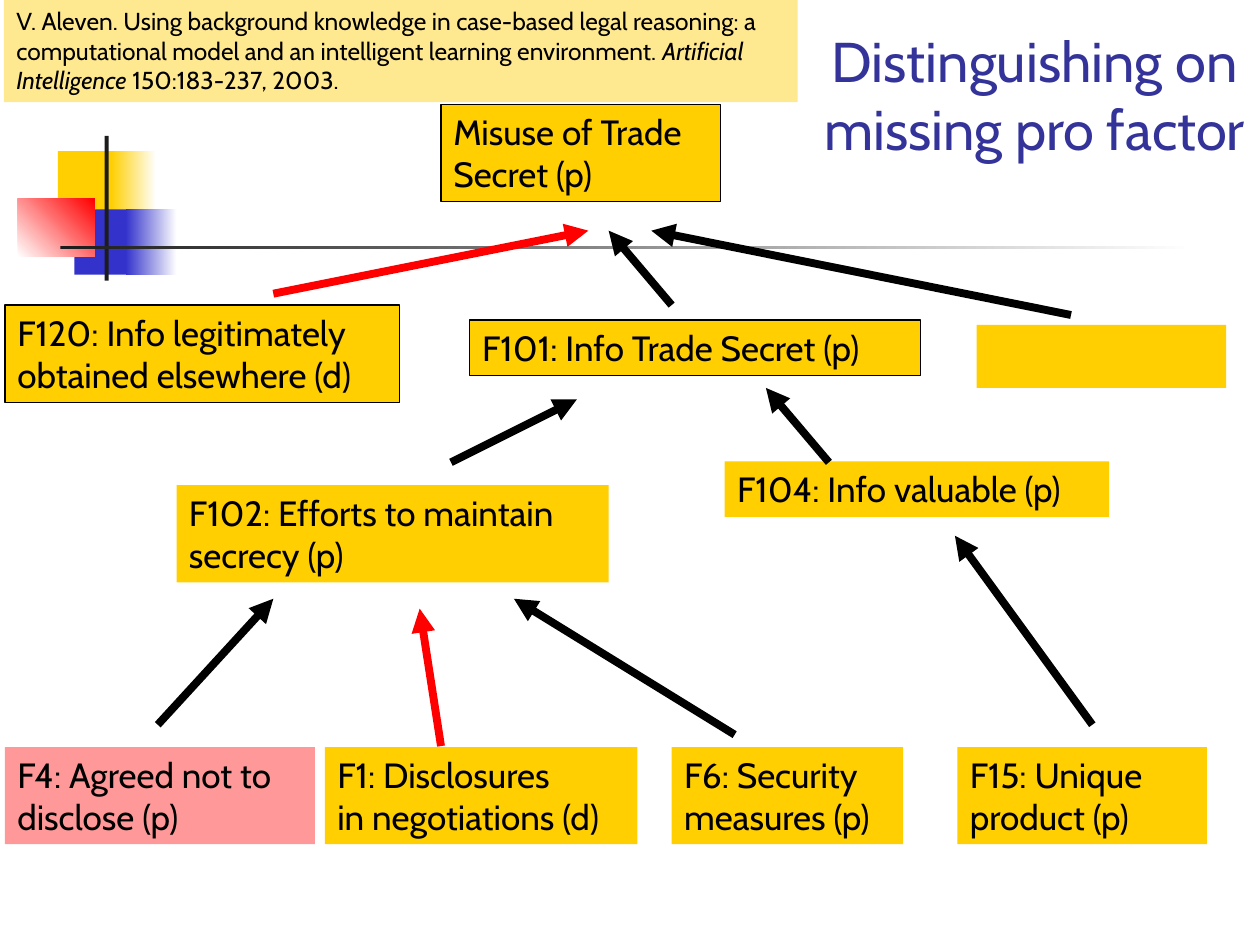
import pptx
import pptx.dml.color
import pptx.enum.shapes
import pptx.enum.text
import pptx.oxml
import pptx.oxml.ns
import pptx.util

Cm = pptx.util.Cm
Pt = pptx.util.Pt
FONT = "Cabin"
COLORS = {
    "yellow": "FFCF01", "pale": "FFE990", "pink": "FF9999", "red": "FF0000",
    "blue": "3333CC", "title": "333399", "dark": "1C1C1C",
    "black": "000000", "white": "FFFFFF",
}
RGB = {name: pptx.dml.color.RGBColor.from_string(value) for name, value in COLORS.items()}

presentation = pptx.Presentation()
presentation.slide_width = Cm(25.4)
presentation.slide_height = Cm(19.05)
slide = presentation.slides.add_slide(presentation.slide_layouts[6])


def add_rectangle(left, top, width, height, fill, fade_to=None, angle=0):
    shape = slide.shapes.add_shape(
        pptx.enum.shapes.MSO_SHAPE.RECTANGLE, Cm(left), Cm(top), Cm(width), Cm(height))
    shape.shadow.inherit = False
    shape.line.fill.background()
    if fade_to:
        shape.fill.gradient()
        shape.fill.gradient_angle = angle
        for stop, color in zip(shape.fill.gradient_stops, (fill, fade_to)):
            stop.color.rgb = RGB[color]
    else:
        shape.fill.solid()
        shape.fill.fore_color.rgb = RGB[fill]
    return shape


def format_text(shape, size, color="black", align="LEFT", anchor="TOP"):
    text_frame = shape.text_frame
    text_frame.word_wrap = True
    text_frame.vertical_anchor = getattr(pptx.enum.text.MSO_ANCHOR, anchor)
    for paragraph in text_frame.paragraphs:
        paragraph.alignment = getattr(pptx.enum.text.PP_ALIGN, align)
        for run in paragraph.runs:
            run.font.name = FONT
            run.font.size = Pt(size)
            run.font.color.rgb = RGB[color]


# Corner decoration: left, top, width, height, fill, fade colour, angle
for decoration in [
    (1.17, 3.05, 1.22, 1.32, "yellow"),
    (2.24, 3.05, 0.91, 1.32, "yellow", "white"),
    (1.5, 4.22, 1.17, 1.32, "blue"),
    (2.54, 4.22, 1.02, 1.32, "blue", "white"),
    (0.36, 4.01, 1.55, 1.17, "white", "red", 45),
    (2.11, 2.74, 0.08, 2.92, "dark"),
    (1.22, 4.95, 22.86, 0.08, "dark", "white"),
]:
    add_rectangle(*decoration)

# Factor boxes: text, left, top, width, fill, outlined
ONE_LINE, TWO_LINES = 1.12, 1.96
LEAF_TOP = 15.06
for text, left, top, width, fill, outlined in [
    ("Misuse of Trade\nSecret (p)", 8.89, 2.11, 5.64, "yellow", True),
    ("F120: Info legitimately\nobtained elsewhere (d)", 0.1, 6.15, 7.95, "yellow", True),
    ("F101: Info Trade Secret (p)", 9.47, 6.45, 9.09, "yellow", True),
    ("F102: Efforts to maintain\nsecrecy (p)", 3.56, 9.78, 8.71, "yellow", False),
    ("F104: Info valuable (p)", 14.61, 9.3, 7.75, "yellow", False),
    ("F4: Agreed not to disclose (p)", 0.1, LEAF_TOP, 6.25, "pink", False),
    ("F1: Disclosures\nin negotiations (d)", 6.55, LEAF_TOP, 6.3, "yellow", False),
    ("F6: Security\nmeasures (p)", 13.54, LEAF_TOP, 4.67, "yellow", False),
    ("F15: Unique product (p)", 19.3, LEAF_TOP, 5.03, "yellow", False),
]:
    two_lines = "\n" in text or top == LEAF_TOP
    box = add_rectangle(left, top, width, TWO_LINES if two_lines else ONE_LINE, fill)
    if outlined:
        box.line.color.rgb = RGB["black"]
        box.line.width = Pt(0.75)
    box.text_frame.text = text
    format_text(box, 20)

# Empty factor box
add_rectangle(19.69, 6.55, 5.03, 1.27, "yellow")

# Arrows from each factor to the one it bears on
for start_x, start_y, end_x, end_y, color in [
    (9.09, 9.32, 11.63, 8.05, "black"),
    (16.71, 9.32, 15.44, 7.82, "black"),
    (3.18, 14.61, 5.51, 12.07, "black"),
    (8.89, 15.04, 8.46, 12.27, "red"),
    (14.81, 14.81, 10.36, 12.07, "black"),
    (22.02, 14.61, 19.25, 10.8, "black"),
    (13.54, 6.15, 12.27, 4.65, "black"),
    (5.51, 5.92, 11.86, 4.65, "red"),
    (21.59, 6.35, 13.13, 4.65, "black"),
]:
    arrow = slide.shapes.add_connector(
        pptx.enum.shapes.MSO_CONNECTOR.STRAIGHT,
        Cm(start_x), Cm(start_y), Cm(end_x), Cm(end_y))
    arrow.line.color.rgb = RGB[color]
    arrow.line.width = Pt(4.5)
    namespace = pptx.oxml.ns.nsdecls("a")
    arrow.line._get_or_add_ln().append(
        pptx.oxml.parse_xml(f'<a:tailEnd {namespace} type="triangle"/>'))
    arrow._element.spPr.append(pptx.oxml.parse_xml(f"<a:effectLst {namespace}/>"))

# Citation
citation = add_rectangle(0.08, 0, 16, 2.06, "pale")
paragraph = citation.text_frame.paragraphs[0]
for text, italic in [
    ("V. Aleven. Using background knowledge in case-based legal reasoning: "
     "a computational model and an intelligent learning environment. ", False),
    ("Artificial Intelligence", True),
    (" 150:183-237, 2003.", False),
]:
    run = paragraph.add_run()
    run.text = text
    run.font.italic = italic
format_text(citation, 14)

# Title
title = slide.shapes.add_textbox(Cm(15.88), Cm(0.2), Cm(9.96), Cm(3.18))
title.text_frame.text = "Distinguishing on\vmissing pro factor"
format_text(title, 32, "title", "CENTER", "BOTTOM")

presentation.save("out.pptx")
